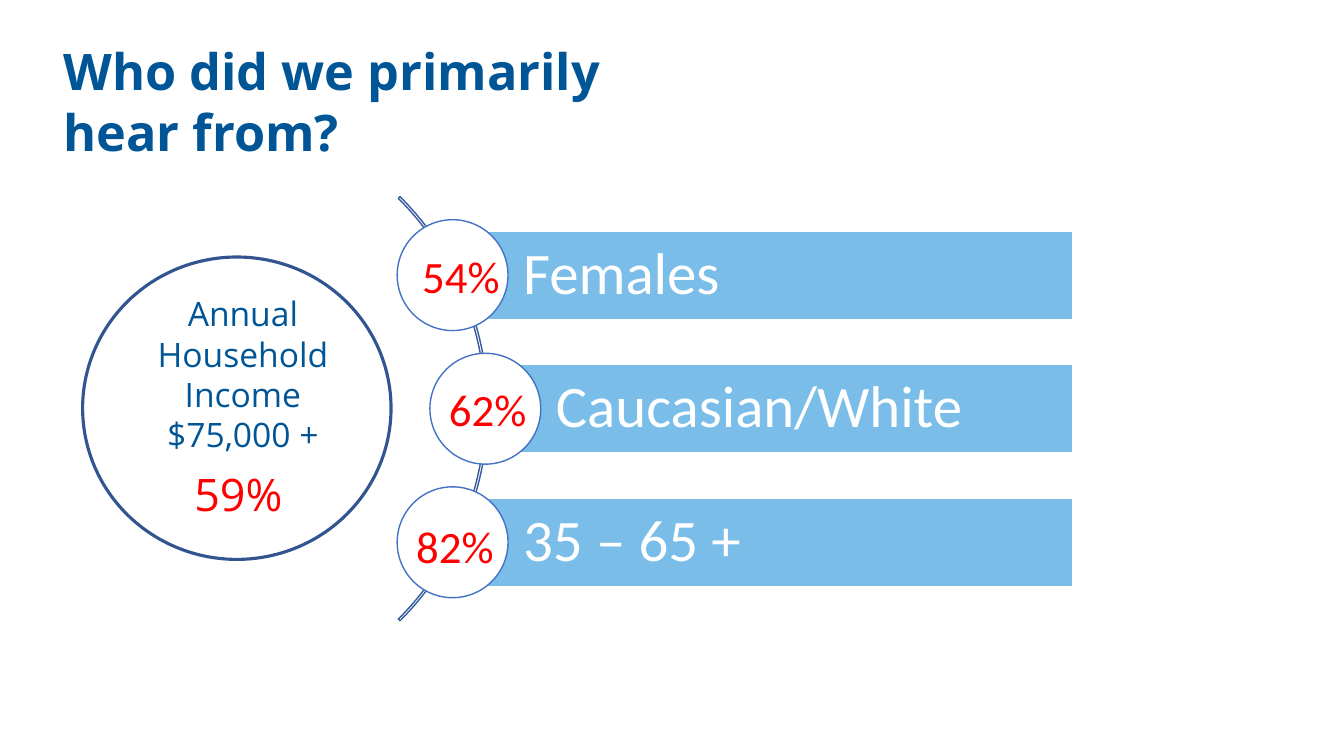
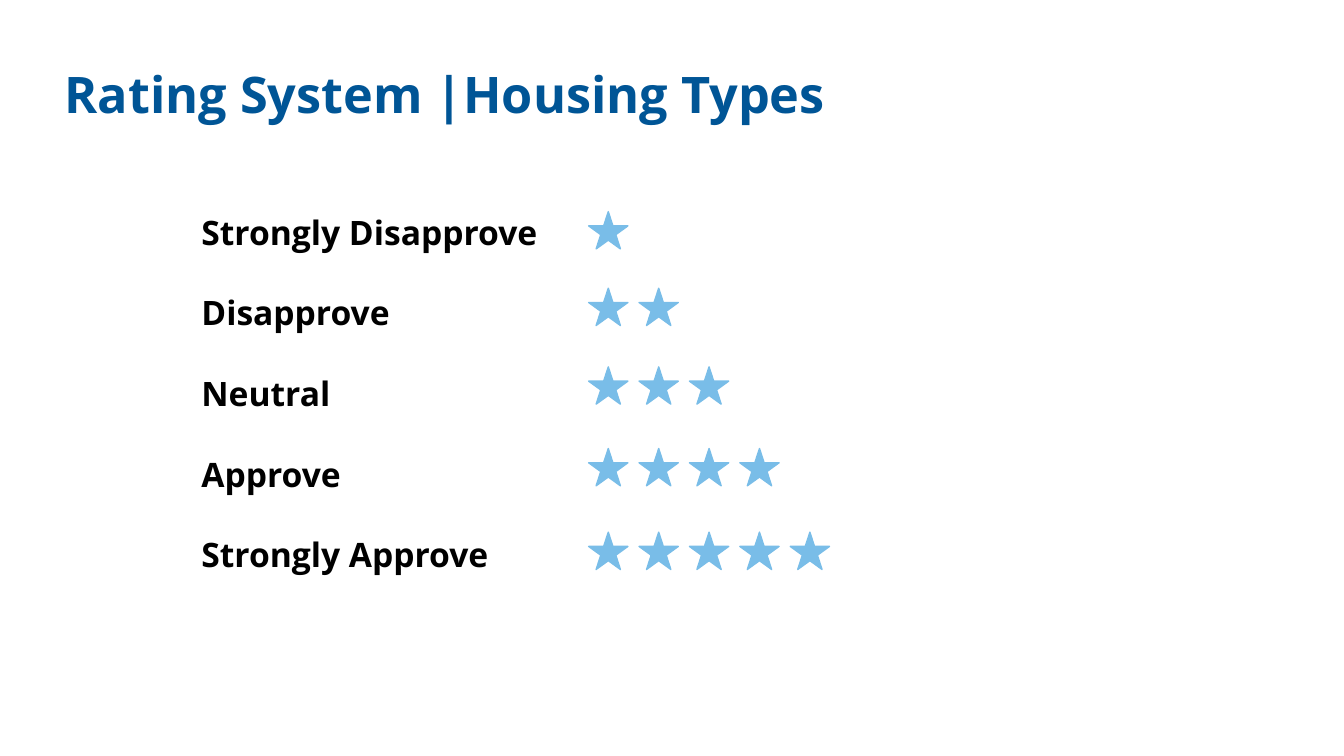
import pptx
import pptx.util
import pptx.dml.color
import pptx.enum.shapes
import pptx.enum.text

COLORS = {
    "title": "005596",
    "sky": "79BDE8",
    "white": "FFFFFF",
    "black": "000000",
    "red": "FF0000",
    "ring": "325491",
    "badge": "4472C4",
    "arc": "365B9D",
}
COLUMNS, ROWS = 160, 90
HEADING_FONT, BODY_FONT = "Open Sans", "Calibri"
SHAPES = pptx.enum.shapes.MSO_SHAPE
ALIGN = pptx.enum.text.PP_ALIGN
ANCHOR = pptx.enum.text.MSO_ANCHOR

presentation = pptx.Presentation()
presentation.slide_width = pptx.util.Inches(13.33)
presentation.slide_height = pptx.util.Inches(7.5)


def color(name):
    return pptx.dml.color.RGBColor.from_string(COLORS[name])


def grid(left, top, width, height):
    column = presentation.slide_width / COLUMNS
    row = presentation.slide_height / ROWS
    return [pptx.util.Emu(round(length * step)) for length, step in
            zip((left, top, width, height), (column, row, column, row))]


def within(box, left, top, width, height):
    return box[0] + left, box[1] + top, width, height


def write(frame, lines, size, color_name, font=HEADING_FONT, bold=False,
          align=ALIGN.LEFT, line_spacing=None, gap=0):
    frame.word_wrap = True
    for index, line in enumerate(lines):
        paragraph = frame.paragraphs[0] if index == 0 else frame.add_paragraph()
        paragraph.alignment = align
        paragraph.line_spacing = line_spacing
        if index < len(lines) - 1:
            paragraph.space_after = pptx.util.Pt(gap)
        run = paragraph.add_run()
        run.text = line
        run.font.name = font
        run.font.size = pptx.util.Pt(size)
        run.font.bold = bold
        run.font.color.rgb = color(color_name)


def add_text(slide, box, lines, size, color_name, **style):
    text_box = slide.shapes.add_textbox(*grid(*box))
    write(text_box.text_frame, lines, size, color_name, **style)


def add_shape(slide, kind, box, fill, line, line_width=1):
    shape = slide.shapes.add_shape(kind, *grid(*box))
    shape.shadow.inherit = False
    if fill:
        shape.fill.solid()
        shape.fill.fore_color.rgb = color(fill)
    else:
        shape.fill.background()
    shape.line.color.rgb = color(line)
    shape.line.width = pptx.util.Pt(line_width)
    return shape


def add_titled_slide(text, box, line_spacing=None):
    slide = presentation.slides.add_slide(presentation.slide_layouts[5])
    title = slide.shapes.title
    title.left, title.top, title.width, title.height = grid(*box)
    frame = title.text_frame
    frame.auto_size = pptx.enum.text.MSO_AUTO_SIZE.NONE
    frame.vertical_anchor = ANCHOR.TOP
    write(frame, [text], 36, "title", bold=True, line_spacing=line_spacing)
    return slide


def add_respondent_bars(slide, box, groups):
    pitch, badge, bar_height = 15.9, 13.2, 10.56
    arc_size = 71.4
    arc = add_shape(slide, SHAPES.BLOCK_ARC,
                    within(box, -60.6, (box[3] - arc_size) / 2, arc_size, arc_size),
                    None, "arc")
    for index, value in enumerate((189, 27, 0.004)):
        arc.adjustments[index] = value

    for index, (label, percent, indent, percent_left, percent_top) in enumerate(groups):
        top = index * pitch
        bar_left = indent + badge / 2
        bar = add_shape(slide, SHAPES.RECTANGLE,
                        within(box, bar_left, top + (badge - bar_height) / 2,
                               box[2] - bar_left, bar_height), "sky", "white")
        frame = bar.text_frame
        frame.margin_left = pptx.util.Inches(0.7)
        frame.margin_right = pptx.util.Inches(0.12)
        frame.vertical_anchor = ANCHOR.MIDDLE
        write(frame, [label], 42, "white", font=BODY_FONT, line_spacing=0.9)
        add_shape(slide, SHAPES.OVAL, within(box, indent, top, badge, badge),
                  "white", "badge")
        add_text(slide, within(box, indent + percent_left, top + percent_top, 14.76, 7.68),
                 [percent], 32, "red", font=BODY_FONT)


def add_income_circle(slide, box):
    add_shape(slide, SHAPES.OVAL, box, None, "ring", 2.25)
    add_text(slide, within(box, 12.12, 24.36, 18.24, 7.68), ["59%"], 32, "red")
    add_text(slide, within(box, 3.96, 3.72, 30.24, 20.64),
             ["Annual Household Income", "$75,000 +"], 24, "title", align=ALIGN.CENTER)


def add_rating_scale(slide, box, ratings):
    add_text(slide, within(box, 0, 0, 46.32, box[3]), [label for label, _ in ratings],
             24, "black", bold=True, gap=28.8)
    for count, (_, top) in enumerate(ratings, start=1):
        for position in range(count):
            add_shape(slide, SHAPES.STAR_5_POINT,
                      within(box, 47.28 + 6 * position, top, 4.68, 4.44), "sky", "sky")


def main():
    respondents = add_titled_slide("Who did we primarily hear from?",
                                   (6.36, 4.2, 74.16, 15.72))
    add_respondent_bars(respondents, (47.28, 26.16, 80.4, 45), [
        ("Females", "54%", 0, 1.8, 2.88),
        ("Caucasian/White", "62%", 3.9, 1.08, 2.76),
        ("35 – 65 +", "82%", 0, 1.08, 3.24),
    ])
    add_income_circle(respondents, (9.84, 30.6, 36.72, 36))

    rating = add_titled_slide("Rating System |Housing Types",
                              (6.48, 7.68, 120.84, 7.8), line_spacing=0.9)
    add_rating_scale(rating, (22.8, 24.6, 76.08, 44.88), [
        ("Strongly Disapprove", 0.6),
        ("Disapprove", 9.72),
        ("Neutral", 19.08),
        ("Approve", 28.8),
        ("Strongly Approve", 38.76),
    ])
    presentation.save("out.pptx")


if __name__ == "__main__":
    main()
